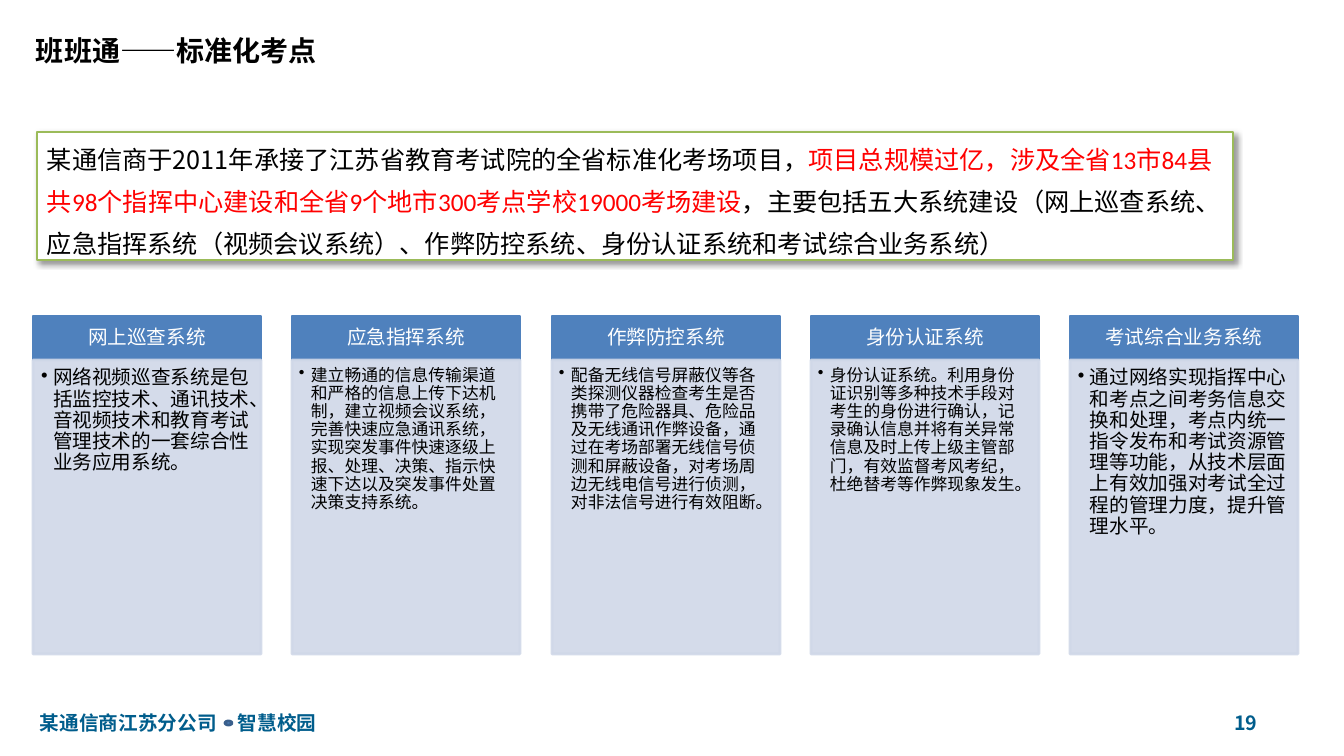
import pptx
import pptx.dml.color
import pptx.enum.lang
import pptx.enum.shapes
import pptx.enum.text
import pptx.oxml
import pptx.oxml.ns
import pptx.util
from lxml import etree

RGBColor = pptx.dml.color.RGBColor
Shape = pptx.enum.shapes.MSO_SHAPE
Anchor = pptx.enum.text.MSO_ANCHOR
Align = pptx.enum.text.PP_ALIGN
qn = pptx.oxml.ns.qn

BLACK = RGBColor(0x00, 0x00, 0x00)
WHITE = RGBColor(0xFF, 0xFF, 0xFF)
RED = RGBColor(0xFF, 0x00, 0x00)
GREEN = RGBColor(0x9B, 0xBB, 0x59)
BLUE = RGBColor(0x4F, 0x81, 0xBD)
DARK_BLUE = RGBColor(0x3A, 0x5F, 0x8C)
PALE_BLUE = RGBColor(0xD0, 0xD8, 0xE8)
FOOTER_BLUE = RGBColor(0x00, 0x5D, 0x8C)

EMU_PER_PX = 914400 / 100.8
SLIDE_WIDTH, SLIDE_HEIGHT = 1344, 756

INTRO = [
    ("某通信商于2011年承接了江苏省教育考试院的全省标准化考场项目，", BLACK, None),
    ("项目", RED, None),
    ("总规模过亿，涉及全省13市84县共98个指挥中心建设和全省9个地市300考点学校"
     "19000考场建设", RED, "Calibri"),
    ("，主要包括五大系统建设（网上巡查系统、应急指挥系统（视频会议系统）、"
     "作弊防控系统、身份认证系统和考试综合业务系统）", BLACK, "Calibri"),
]

SYSTEMS = [
    ("网上巡查系统", 14,
     "网络视频巡查系统是包括监控技术、通讯技术、音视频技术和教育考试管理技术的"
     "一套综合性业务应用系统。"),
    ("应急指挥系统", 12,
     "建立畅通的信息传输渠道和严格的信息上传下达机制，建立视频会议系统，"
     "完善快速应急通讯系统，实现突发事件快速逐级上报、处理、决策、指示快速下达"
     "以及突发事件处置决策支持系统。"),
    ("作弊防控系统", 12,
     "配备无线信号屏蔽仪等各类探测仪器检查考生是否携带了危险器具、危险品及"
     "无线通讯作弊设备，通过在考场部署无线信号侦测和屏蔽设备，"
     "对考场周边无线电信号进行侦测，对非法信号进行有效阻断。"),
    ("身份认证系统", 12,
     "身份认证系统。利用身份证识别等多种技术手段对考生的身份进行确认，"
     "记录确认信息并将有关异常信息及时上传上级主管部门，有效监督考风考纪，"
     "杜绝替考等作弊现象发生。"),
    ("考试综合业务系统", 14,
     "通过网络实现指挥中心和考点之间考务信息交换和处理，考点内统一指令发布和"
     "考试资源管理等功能，从技术层面上有效加强对考试全过程的管理力度，"
     "提升管理水平。"),
]
FIRST_LEFT, LAST_LEFT = 33, 1070
COLUMN_WIDTH = 228
HEADER_TOP, HEADER_HEIGHT, BODY_HEIGHT = 316, 44, 294


def px(length):
    return pptx.util.Emu(round(length * EMU_PER_PX))


class SlideBuilder:
    font = "Noto Sans CJK SC"

    def __init__(self, slide):
        self.slide = slide

    def frame(self, shape, insets=(10, 5, 10, 5), anchor=Anchor.MIDDLE):
        frame = shape.text_frame
        frame.word_wrap = True
        frame.auto_size = pptx.enum.text.MSO_AUTO_SIZE.NONE
        frame.vertical_anchor = anchor
        (frame.margin_left, frame.margin_top,
         frame.margin_right, frame.margin_bottom) = map(px, insets)
        return frame.paragraphs[0]

    def run(self, paragraph, text, size, color, bold=False, latin=None):
        run = paragraph.add_run()
        run.text = text
        font = run.font
        font.size = pptx.util.Pt(size)
        font.bold = bold
        font.color.rgb = color
        font.name = latin or self.font
        font.language_id = pptx.enum.lang.MSO_LANGUAGE_ID.SIMPLIFIED_CHINESE
        latin_font = font._element.find(qn("a:latin"))
        east_asian = etree.Element(qn("a:ea"), typeface=self.font)
        latin_font.addnext(east_asian)

    def title(self, text, box):
        title = self.slide.shapes.title
        title.left, title.top, title.width, title.height = map(px, box)
        paragraph = self.frame(title)
        paragraph.alignment = Align.LEFT
        self.run(paragraph, text, 20, BLACK, bold=True)

    def label(self, text, box, align, tab=None):
        label = self.slide.shapes.add_textbox(*map(px, box))
        paragraph = self.frame(label, insets=(0, 5, 0, 5))
        paragraph.alignment = align
        if tab:
            tabs = etree.SubElement(paragraph._p.get_or_add_pPr(), qn("a:tabLst"))
            etree.SubElement(tabs, qn("a:tab"), pos=str(px(tab)), algn="l")
        self.run(paragraph, text, 14, FOOTER_BLUE, bold=True)

    def panel(self, box, fill, line, kind=Shape.RECTANGLE, opacity=100):
        panel = self.slide.shapes.add_shape(kind, *map(px, box))
        panel.shadow.inherit = False
        panel.fill.solid()
        panel.fill.fore_color.rgb = fill
        panel.line.color.rgb = line
        panel.line.width = pptx.util.Pt(2)
        if opacity < 100:
            for color in panel._element.spPr.iter(qn("a:srgbClr")):
                etree.SubElement(color, qn("a:alpha"), val=str(opacity * 1000))
        return panel

    def drop_shadow(self, shape):
        effects = shape._element.spPr.find(qn("a:effectLst"))
        shadow = etree.SubElement(
            effects, qn("a:outerShdw"), blurRad=str(pptx.util.Pt(4)),
            dist=str(pptx.util.Pt(3)), dir="2700000", algn="tl", rotWithShape="0")
        color = etree.SubElement(shadow, qn("a:srgbClr"), val=str(BLACK))
        etree.SubElement(color, qn("a:alpha"), val="40000")

    def intro(self, parts, box):
        panel = self.panel(box, WHITE, GREEN)
        self.drop_shadow(panel)
        paragraph = self.frame(panel)
        paragraph.alignment = Align.LEFT
        paragraph.line_spacing = pptx.util.Pt(30)
        for text, color, latin in parts:
            self.run(paragraph, text, 18, color, latin=latin)

    def system_column(self, left, name, size, description):
        header = self.panel((left, HEADER_TOP, COLUMN_WIDTH, HEADER_HEIGHT), BLUE, BLUE)
        paragraph = self.frame(header, insets=(11, 6, 11, 6))
        paragraph.alignment = Align.CENTER
        paragraph.line_spacing = 0.9
        self.run(paragraph, name, 14, WHITE)

        body = self.panel(
            (left, HEADER_TOP + HEADER_HEIGHT, COLUMN_WIDTH, BODY_HEIGHT),
            PALE_BLUE, PALE_BLUE, opacity=90)
        insets = (8, 8, 11, 12) if size == 14 else (7, 7, 9, 10)
        paragraph = self.frame(body, insets, Anchor.TOP)
        paragraph.alignment = Align.LEFT
        paragraph.line_spacing = 0.9
        properties = paragraph._p.get_or_add_pPr()
        properties.set("marL", str(px(12)))
        properties.set("indent", str(-px(12)))
        etree.SubElement(properties, qn("a:buChar"), char="•")
        self.run(paragraph, description, size, BLACK)


def main():
    deck = pptx.Presentation()
    deck.slide_width, deck.slide_height = px(SLIDE_WIDTH), px(SLIDE_HEIGHT)
    title_only = deck.slide_layouts[5]
    builder = SlideBuilder(deck.slides.add_slide(title_only))

    builder.title("班班通——标准化考点", (26, 8, 1207, 85))
    builder.intro(INTRO, (37, 132, 1196, 128))

    pitch = (LAST_LEFT - FIRST_LEFT) / (len(SYSTEMS) - 1)
    for index, system in enumerate(SYSTEMS):
        builder.system_column(round(FIRST_LEFT + index * pitch), *system)

    builder.label("某通信商江苏分公司\t智慧校园", (40, 703, 300, 40), Align.LEFT, tab=198)
    builder.panel((225, 721, 7, 4), BLUE, DARK_BLUE, kind=Shape.OVAL)
    builder.label("19", (1201, 703, 90, 40), Align.CENTER)

    deck.save("out.pptx")


if __name__ == "__main__":
    main()
